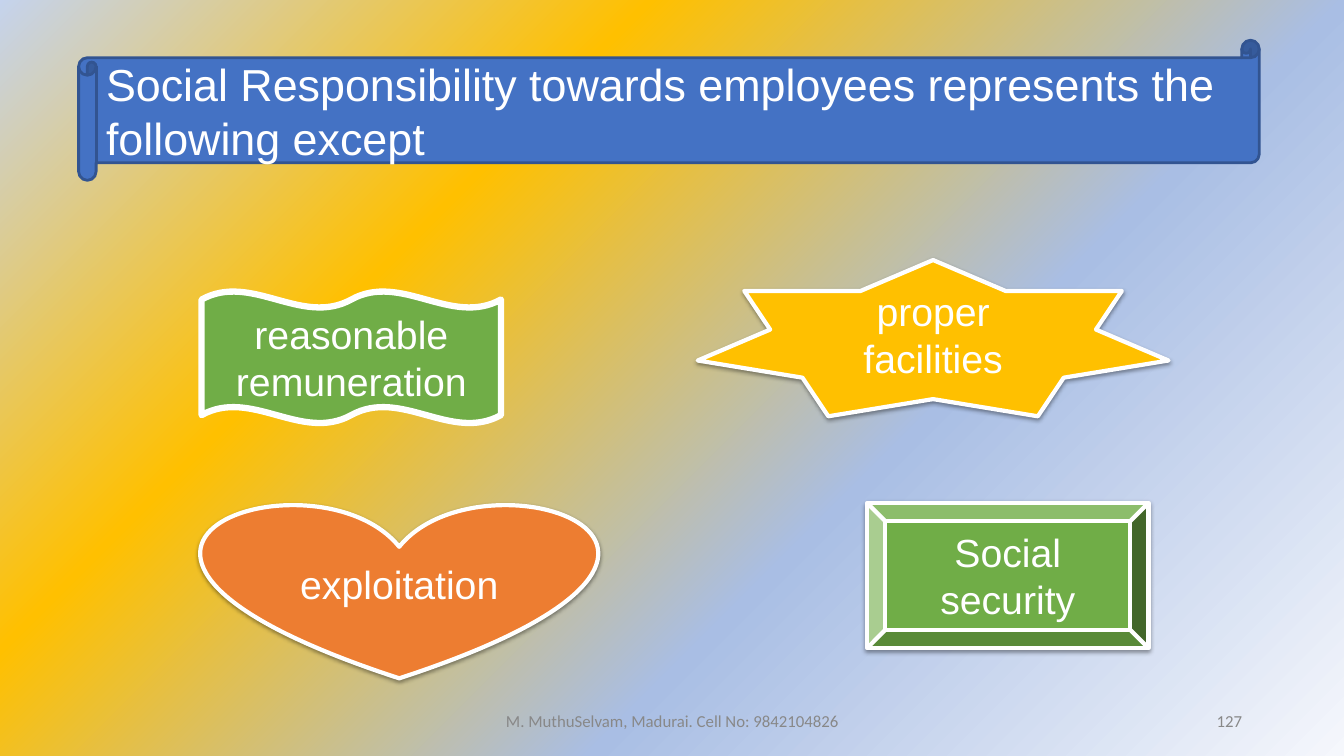
from lxml import etree
from pptx import Presentation
from pptx import util as u
from pptx.dml.color import RGBColor
from pptx.enum import shapes, text
from pptx.oxml import ns

COLORS = {
    "white": "FFFFFF", "blue": "4472C4", "navy": "325491",
    "orange": "ED7D31", "gold": "FFC000", "green": "70AD47",
    "grey": "888888", "black": "000000",
    "pale": "F5F7FC", "sky": "A9BEE4", "mist": "C5D3ED",
}
KIND = shapes.MSO_SHAPE
ALIGN = text.PP_ALIGN

deck = Presentation()
deck.slide_width = u.Inches(13.33)
deck.slide_height = u.Inches(7.5)
slide = deck.slides.add_slide(deck.slide_layouts[6])


def share(left, top, width, height):
    across, down = deck.slide_width / 100, deck.slide_height / 100
    return [round(n) for n in (left * across, top * down, width * across, height * down)]


def write(holder, words, size=28, font="Arial", color="white", align=ALIGN.CENTER):
    frame = holder.text_frame
    frame.word_wrap = True
    frame.vertical_anchor = text.MSO_ANCHOR.MIDDLE
    paragraph = frame.paragraphs[0]
    paragraph.alignment = align
    run = paragraph.add_run()
    run.text = words
    run.font.size = u.Pt(size)
    run.font.name = font
    run.font.color.rgb = RGBColor.from_string(COLORS[color])


backdrop = slide.background.fill
backdrop.gradient()
gradient = slide.background._cSld.find(".//" + ns.qn("a:gradFill"))
for child in list(gradient):
    gradient.remove(child)
stops = etree.SubElement(gradient, ns.qn("a:gsLst"))
for position, color in [(0, "pale"), (36, "sky"), (69, "gold"), (100, "mist")]:
    stop = etree.SubElement(stops, ns.qn("a:gs"), pos=str(position * 1000))
    etree.SubElement(stop, ns.qn("a:srgbClr"), val=COLORS[color])
spread = etree.SubElement(gradient, ns.qn("a:path"), path="circle")
etree.SubElement(spread, ns.qn("a:fillToRect"), l="100000", t="100000")
etree.SubElement(gradient, ns.qn("a:tileRect"), r="-100000", b="-100000")

LEFT, LOWER = 15, 66.53
figures = [
    (KIND.HEART, (LEFT, LOWER, 29.41, 23.2), "orange", "white", 3, True,
     "exploitation", {}),
    (KIND.STAR_7_POINT, (51.91, 34.4, 35.03, 20.67), "gold", "white", 3, True,
     "proper facilities", {}),
    (KIND.BEVEL, (64.52, LOWER, 20.93, 19.2), "green", "white", 3, True,
     "Social security", {}),
    (KIND.DOUBLE_WAVE, (LEFT, 38.53, 22.28, 17.47), "green", "white", 4.5, False,
     "reasonable remuneration", {}),
    (KIND.HORIZONTAL_SCROLL, (5.85, 5.33, 87.85, 18.53), "blue", "navy", 2, False,
     "Social Responsibility towards employees represents the following except",
     {"size": 32, "align": ALIGN.LEFT}),
]
for kind, place, fill, outline, weight, shaded, words, style in figures:
    figure = slide.shapes.add_shape(kind, *share(*place))
    figure.fill.solid()
    figure.fill.fore_color.rgb = RGBColor.from_string(COLORS[fill])
    figure.line.color.rgb = RGBColor.from_string(COLORS[outline])
    figure.line.width = u.Pt(weight)
    figure.shadow.inherit = False
    if shaded:
        effects = figure._element.spPr.find(ns.qn("a:effectLst"))
        shade = etree.SubElement(
            effects, ns.qn("a:outerShdw"), blurRad=str(u.Pt(3.1)),
            dist=str(u.Pt(1.6)), dir="5400000", rotWithShape="0")
        tint = etree.SubElement(shade, ns.qn("a:srgbClr"), val=COLORS["black"])
        etree.SubElement(tint, ns.qn("a:alpha"), val="38000")
    write(figure, words, **style)

for left, width, words, align in [
    (33.16, 33.76, "M. MuthuSelvam, Madurai. Cell No: 9842104826", ALIGN.CENTER),
    (70.67, 22.5, "127", ALIGN.RIGHT),
]:
    footer = slide.shapes.add_textbox(*share(left, 92.67, width, 5.33))
    write(footer, words, size=12, font="Calibri", color="grey", align=align)

deck.save("out.pptx")
